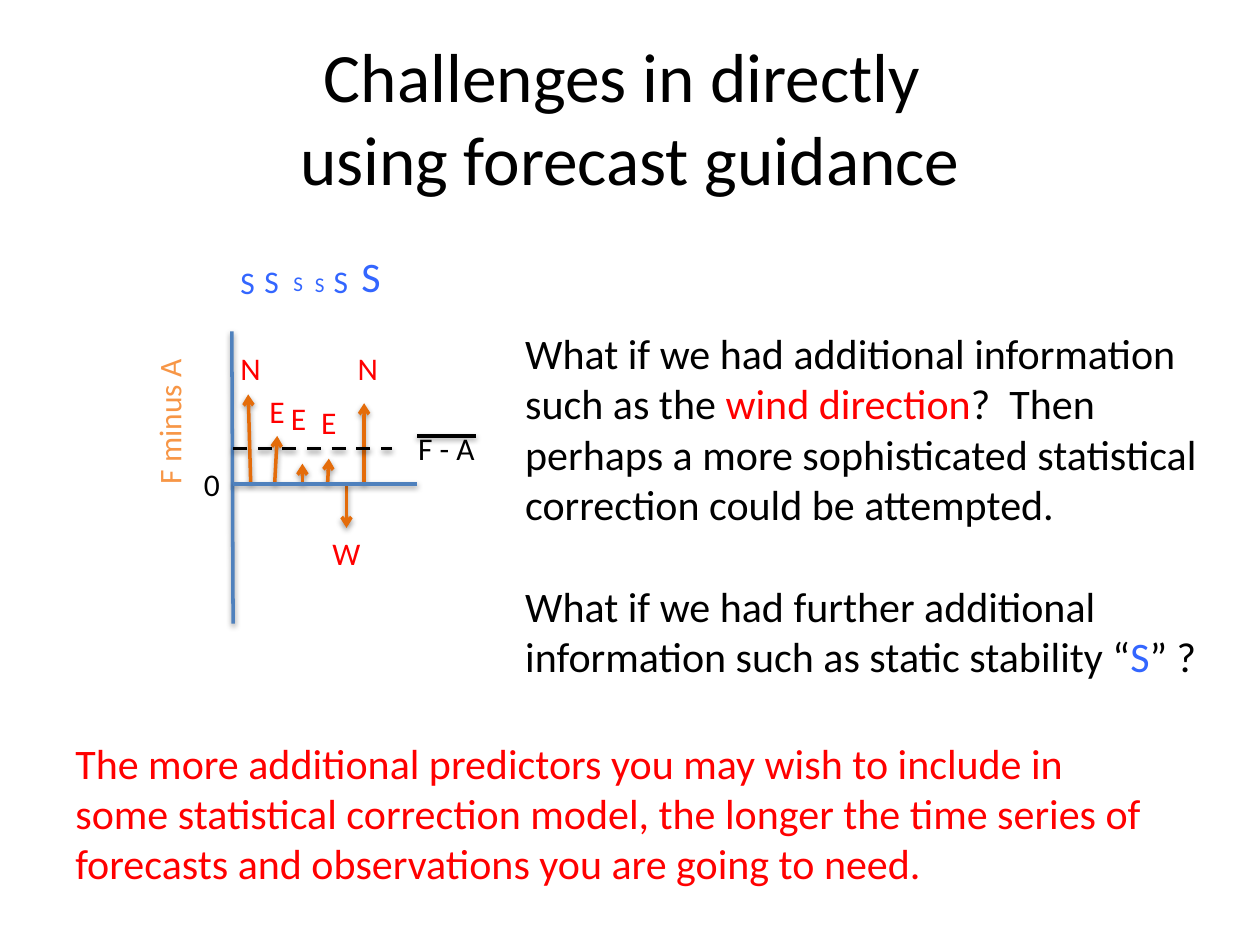
from dataclasses import dataclass
from lxml.etree import SubElement
from pptx import Presentation
from pptx.dml.color import RGBColor
from pptx.enum.dml import MSO_LINE
from pptx.enum.shapes import MSO_CONNECTOR
from pptx.enum.text import MSO_ANCHOR, MSO_AUTO_SIZE, PP_ALIGN
from pptx.oxml.ns import qn
from pptx.util import Inches, Pt


@dataclass(frozen=True)
class Theme:
    font: str = "Calibri"
    black: str = "000000"
    red: str = "FF0000"
    stability: str = "3366FF"
    arrow: str = "E46C0A"
    axis: str = "4F81BD"
    axis_title: str = "F79646"
    title_size: float = 39.6
    body_size: int = 24
    label_size: int = 18
    small_size: int = 12
    line_width: int = 2


@dataclass(frozen=True)
class Box:
    column: float
    row: float
    columns: float
    rows: float

    def inner(self, column, row, columns, rows):
        return Box(self.column + column, self.row + row, columns, rows)

    def frame(self):
        return [Inches(value * CELL) for value in (self.column, self.row, self.columns, self.rows)]

    def point(self, column, row):
        return Inches((self.column + column) * CELL), Inches((self.row + row) * CELL)


THEME = Theme()
CELL = 0.1
SLIDE = Box(0, 0, 100, 75)
LABEL_HEIGHTS = {THEME.small_size: 3, THEME.label_size: 4, THEME.body_size: 5}
LETTER_WIDTHS = {"N": 3.6, "E": 3.3, "W": 4.3}
STABILITY_WIDTHS = {THEME.small_size: 2.8, THEME.label_size: 3.2, THEME.body_size: 3.6}


def apply(target, values):
    for name, value in values.items():
        setattr(target, name, value)


def add_run(paragraph, text, color, size):
    run = paragraph.add_run()
    run.text = text
    apply(run.font, {"name": THEME.font, "size": Pt(size)})
    run.font.color.rgb = RGBColor.from_string(color)


def add_text(slide, box, lines, size, wrap=False):
    shape = slide.shapes.add_textbox(*box.frame())
    frame = shape.text_frame
    apply(frame, {"word_wrap": wrap, "auto_size": MSO_AUTO_SIZE.SHAPE_TO_FIT_TEXT})
    for index, runs in enumerate(lines):
        paragraph = frame.add_paragraph() if index else frame.paragraphs[0]
        for text, color in runs:
            add_run(paragraph, text, color, size)
    return shape


def add_label(slide, box, place, text, color, width, size=THEME.label_size):
    label_box = box.inner(*place, width, LABEL_HEIGHTS[size])
    return add_text(slide, label_box, [[(text, color)]], size)


def add_line(slide, box, start, end, color, arrow=False, dash=None):
    connector = slide.shapes.add_connector(
        MSO_CONNECTOR.STRAIGHT, *box.point(*start), *box.point(*end))
    apply(connector.line, {"width": Pt(THEME.line_width), "dash_style": dash})
    connector.line.color.rgb = RGBColor.from_string(color)
    properties = connector._element.spPr
    if arrow:
        SubElement(properties.find(qn("a:ln")), qn("a:tailEnd"), type="arrow")
    effects = SubElement(properties, qn("a:effectLst"))
    shadow = SubElement(effects, qn("a:outerShdw"), blurRad="40000", dist="20000",
                        dir="5400000", rotWithShape="0")
    shadow_color = SubElement(shadow, qn("a:srgbClr"), val=THEME.black)
    SubElement(shadow_color, qn("a:alpha"), val="38000")


def add_title(slide, box):
    title = slide.shapes.title
    apply(title, dict(zip(("left", "top", "width", "height"), box.frame())))
    apply(title.text_frame, {"vertical_anchor": MSO_ANCHOR.MIDDLE, "word_wrap": True})
    paragraph = title.text_frame.paragraphs[0]
    paragraph.alignment = PP_ALIGN.CENTER
    first, second = "Challenges in directly ", "using forecast guidance"
    add_run(paragraph, first, THEME.black, THEME.title_size)
    paragraph.add_line_break()
    add_run(paragraph, second, THEME.black, THEME.title_size)


def add_error_diagram(slide, box):
    zero_row, mean_row = 19.4, 16.6
    small, medium, large = THEME.small_size, THEME.label_size, THEME.body_size
    observations = [
        ((12.9, 12.7, 12.3), "N", (11.1, 8.2), (11.1, 1.4), medium),
        ((14.8, 15, 15.6), "E", (13.4, 11.6), (13, 1.3), medium),
        ((17, 17, 17.8), "E", (15.1, 12.2), (15.3, 2), small),
        ((19, 19.1, 17.4), "E", (17.5, 12.5), (17, 2.1), small),
        ((20.5, 20.5, 22.9), "W", (18.4, 22.9), (18.5, 1.3), medium),
        ((21.9, 21.9, 13), "N", (20.4, 8.2), (20.7, 0.4), large),
    ]
    for (start, end, tip_row), wind, wind_place, stability_place, size in observations:
        add_line(slide, box, (start, zero_row), (end, tip_row), THEME.arrow, arrow=True)
        add_label(slide, box, wind_place, wind, THEME.red, LETTER_WIDTHS[wind])
        add_label(slide, box, stability_place, "S", THEME.stability,
                  STABILITY_WIDTHS[size], size)

    add_line(slide, box, (11.4, 7.3), (11.5, 30.5), THEME.axis)
    add_line(slide, box, (11.5, zero_row), (26.1, zero_row), THEME.axis)
    add_line(slide, box, (11.5, mean_row), (24.1, mean_row), THEME.black, dash=MSO_LINE.DASH)
    add_line(slide, box, (26.1, 15.6), (30.8, 15.6), THEME.black)

    axis_title = add_label(slide, box, (0.3, 12.3), "F minus A", THEME.axis_title, 12.2)
    axis_title.rotation = 270
    add_label(slide, box, (8.2, 17.4), "0", THEME.black, 3.3)
    add_label(slide, box, (25.2, 14.6), "F - A", THEME.black, 6.6)


def add_questions(slide, box):
    black = THEME.black
    lines = [
        [("What if we had additional information", black)],
        [("such as the ", black), ("wind direction", THEME.red), ("?  Then", black)],
        [("perhaps a more sophisticated statistical", black)],
        [("correction could be attempted.", black)],
        [("What if we had further additional", black)],
        [("information such as static stability “", black), ("S", THEME.stability),
         ("” ?", black)],
    ]
    shape = add_text(slide, box, lines, THEME.body_size)
    shape.text_frame.paragraphs[4].space_before = Pt(THEME.body_size * 1.22)


def add_conclusion(slide, box):
    text = ("The more additional predictors you may wish to include in some statistical "
            "correction model, the longer the time series of forecasts and observations "
            "you are going to need.")
    add_text(slide, box, [[(text, THEME.red)]], THEME.body_size, wrap=True)


def main():
    presentation = Presentation()
    apply(presentation, {"slide_width": Inches(SLIDE.columns * CELL),
                         "slide_height": Inches(SLIDE.rows * CELL)})
    slide = presentation.slides.add_slide(presentation.slide_layouts[5])
    add_title(slide, SLIDE.inner(5, 3, 90, 12.5))
    add_error_diagram(slide, SLIDE.inner(7, 19, 32, 31))
    add_questions(slide, SLIDE.inner(40.7, 25.5, 56.2, 29.3))
    add_conclusion(slide, SLIDE.inner(5, 58, 88, 13.1))
    presentation.save("out.pptx")


if __name__ == "__main__":
    main()
